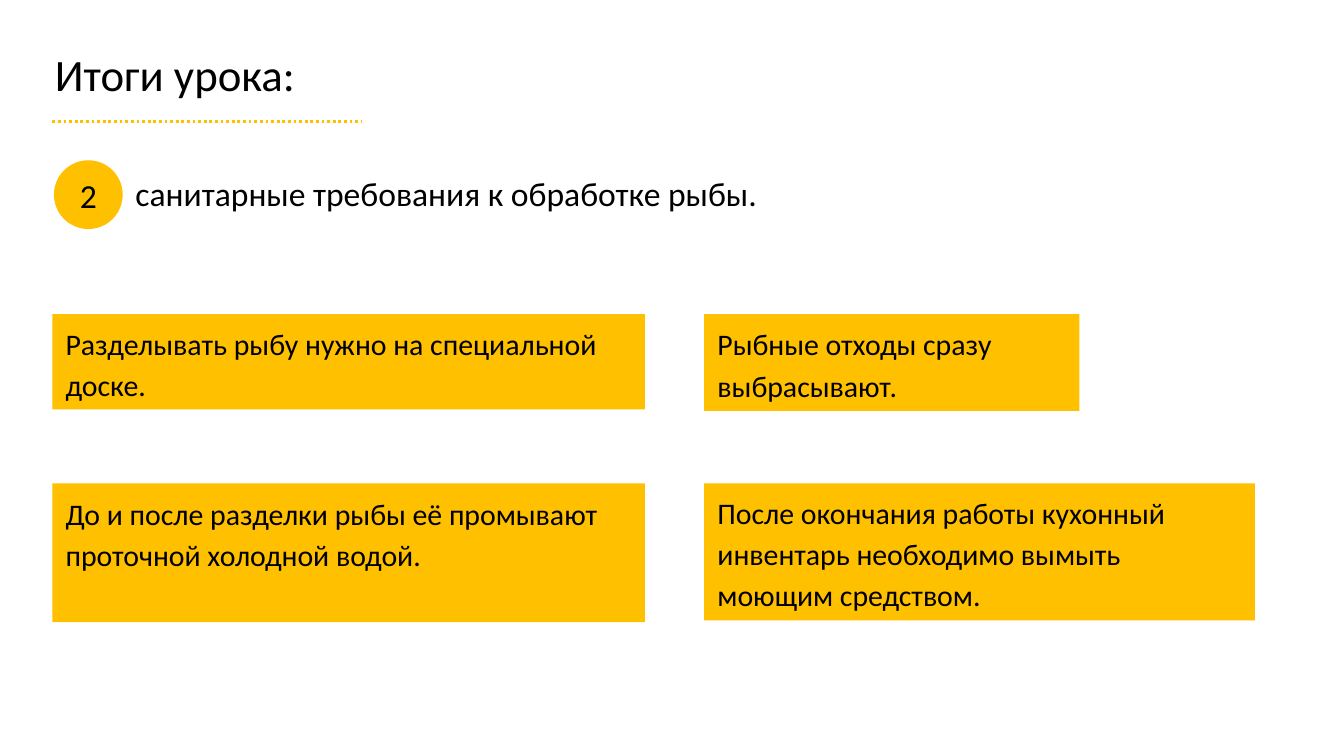
from dataclasses import dataclass

from lxml.etree import SubElement
from pptx import Presentation
from pptx.dml.color import RGBColor
from pptx.enum.dml import MSO_LINE
from pptx.enum.shapes import MSO_CONNECTOR, MSO_SHAPE
from pptx.enum.text import MSO_ANCHOR, MSO_AUTO_SIZE, PP_ALIGN
from pptx.oxml.ns import qn
from pptx.shapes.autoshape import Shape
from pptx.slide import Slide
from pptx.util import Cm, Pt

COLORS = {"text": "000000", "accent": "FFC000"}
FONT = "Calibri"
LEFT, RIGHT = 0.99, 13.31
UPPER, LOWER = 5.94, 9.14


@dataclass
class Card:
    left: float
    top: float
    width: float
    height: float
    text: str
    spacing: float = 1.15


CARDS = [
    Card(LEFT, UPPER, 11.2, 1.8, "Разделывать рыбу нужно на специальной доске.", 1.14),
    Card(LEFT, LOWER, 11.2, 2.62,
         "До и после разделки рыбы её промывают проточной холодной водой."),
    Card(RIGHT, UPPER, 7.09, 1.83, "Рыбные отходы сразу выбрасывают."),
    Card(RIGHT, LOWER, 10.41, 2.59,
         "После окончания работы кухонный инвентарь необходимо вымыть моющим средством.",
         1.14),
]


def color(name: str) -> RGBColor:
    return RGBColor.from_string(COLORS[name])


def write(shape: Shape, text: str, size: int, wrap: bool = True,
          align: PP_ALIGN = PP_ALIGN.LEFT, anchor: MSO_ANCHOR = MSO_ANCHOR.TOP,
          spacing: float = 1.0) -> None:
    frame = shape.text_frame
    frame.word_wrap = wrap
    frame.vertical_anchor = anchor
    para = frame.paragraphs[0]
    para.text = text
    para.alignment = align
    para.line_spacing = spacing
    para.font.name = FONT
    para.font.size = Pt(size)
    para.font.color.rgb = color("text")


def add_label(slide: Slide, left: float, top: float, width: float, height: float,
              text: str, size: int, wrap: bool = True) -> None:
    box = slide.shapes.add_textbox(Cm(left), Cm(top), Cm(width), Cm(height))
    write(box, text, size, wrap)
    box.text_frame.auto_size = MSO_AUTO_SIZE.SHAPE_TO_FIT_TEXT


def add_solid(slide: Slide, kind: MSO_SHAPE, left: float, top: float,
              width: float, height: float) -> Shape:
    shape = slide.shapes.add_shape(kind, Cm(left), Cm(top), Cm(width), Cm(height))
    shape.shadow.inherit = False
    shape.fill.solid()
    shape.fill.fore_color.rgb = color("accent")
    shape.line.fill.background()
    return shape


def add_badge(slide: Slide, left: float, top: float, size: float, text: str) -> None:
    badge = add_solid(slide, MSO_SHAPE.OVAL, left, top, size, size)
    write(badge, text, 18, align=PP_ALIGN.CENTER, anchor=MSO_ANCHOR.MIDDLE)


def add_rule(slide: Slide, left: float, right: float, top: float) -> None:
    """Draw a dotted horizontal line."""
    rule = slide.shapes.add_connector(
        MSO_CONNECTOR.STRAIGHT, Cm(left), Cm(top), Cm(right), Cm(top))
    rule.line.color.rgb = color("accent")
    rule.line.width = Pt(1.5)
    rule.line.dash_style = MSO_LINE.ROUND_DOT
    SubElement(rule._element.spPr, qn("a:effectLst"))


def add_card(slide: Slide, card: Card) -> None:
    shape = add_solid(slide, MSO_SHAPE.RECTANGLE,
                      card.left, card.top, card.width, card.height)
    write(shape, card.text, 16, spacing=card.spacing)
    shape.text_frame.auto_size = MSO_AUTO_SIZE.SHAPE_TO_FIT_TEXT


def main() -> None:
    deck = Presentation()
    deck.slide_width, deck.slide_height = Cm(25.4), Cm(14.29)
    slide = deck.slides.add_slide(deck.slide_layouts[6])

    add_label(slide, 0.79, 0.76, 6.05, 1.27, "Итоги урока:", 24, wrap=False)
    add_label(slide, 2.31, 3.15, 18.11, 1.02,
              "санитарные требования к обработке рыбы.", 18)
    add_badge(slide, 1.02, 3.03, 1.3, "2")
    add_rule(slide, LEFT, 6.83, 2.29)
    for card in CARDS:
        add_card(slide, card)

    deck.save("out.pptx")


if __name__ == "__main__":
    main()
